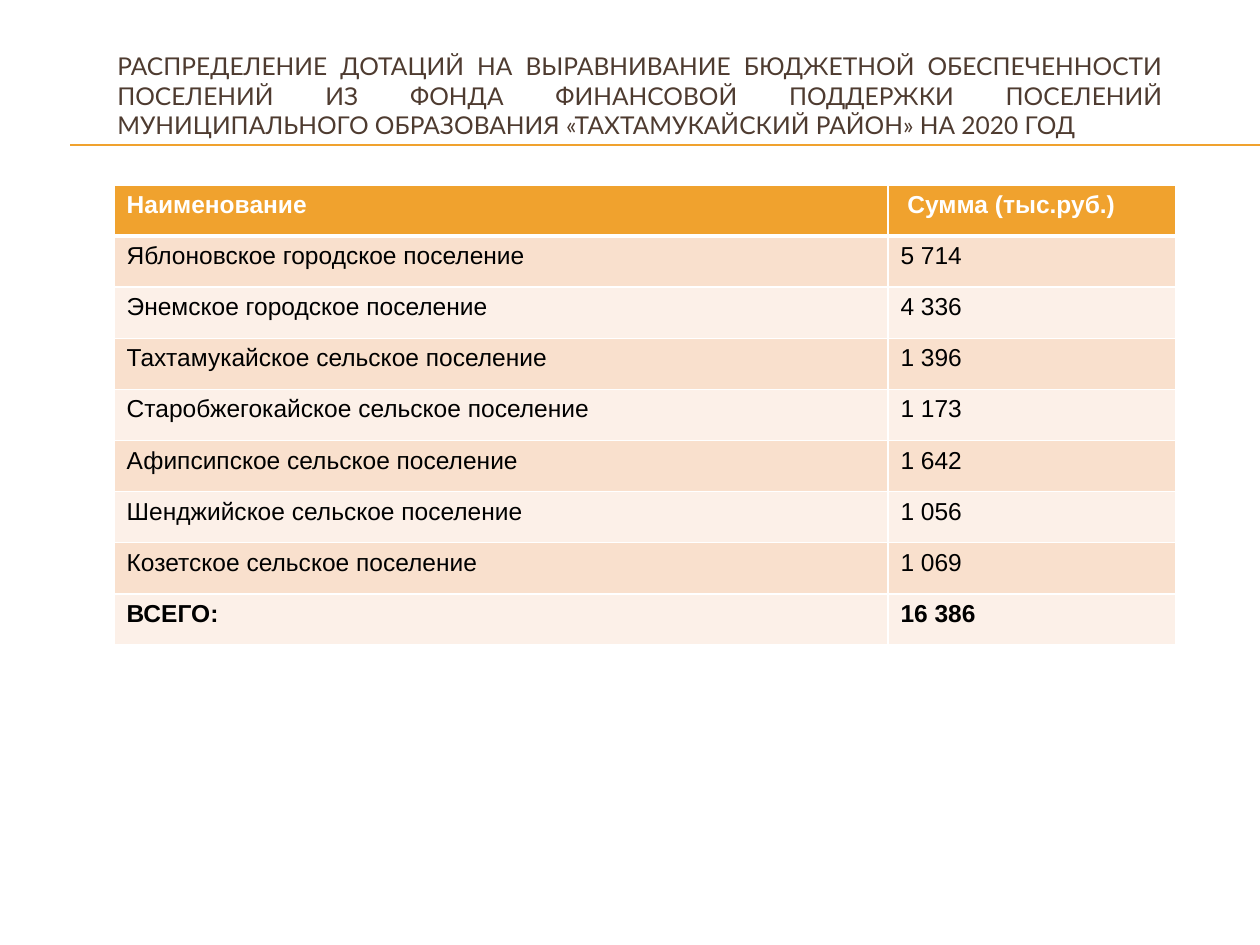
from lxml.etree import SubElement
from pptx import Presentation
from pptx.dml.color import RGBColor
from pptx.enum.shapes import MSO_CONNECTOR
from pptx.enum.text import MSO_ANCHOR, MSO_AUTO_SIZE, PP_ALIGN
from pptx.oxml.ns import qn
from pptx.util import Cm, Pt

COLORS = {
    "gold": "F0A22E",
    "brown": "4E3B30",
    "peach": "F9E0CD",
    "cream": "FCF0E8",
    "white": "FFFFFF",
    "black": "000000",
}
TITLE = (
    "РАСПРЕДЕЛЕНИЕ ДОТАЦИЙ НА ВЫРАВНИВАНИЕ БЮДЖЕТНОЙ ОБЕСПЕЧЕННОСТИ "
    "ПОСЕЛЕНИЙ ИЗ ФОНДА ФИНАНСОВОЙ ПОДДЕРЖКИ ПОСЕЛЕНИЙ "
    "МУНИЦИПАЛЬНОГО ОБРАЗОВАНИЯ «ТАХТАМУКАЙСКИЙ РАЙОН» НА 2020 ГОД"
)
GRANTS = [
    ("Наименование", " Сумма (тыс.руб.)"),
    ("Яблоновское городское поселение", "5 714"),
    ("Энемское городское поселение", "4 336"),
    ("Тахтамукайское сельское поселение", "1 396"),
    ("Старобжегокайское сельское поселение", "1 173"),
    ("Афипсипское сельское поселение", "1 642"),
    ("Шенджийское сельское поселение", "1 056"),
    ("Козетское сельское поселение", "1 069"),
    ("ВСЕГО:", "16 386"),
]


def color(name):
    return RGBColor.from_string(COLORS[name])


def style(par, face, tint, bold=False):
    for run in par.runs:
        run.font.name = face
        run.font.size = Pt(14)
        run.font.bold = bold
        run.font.color.rgb = color(tint)


def add_rules(slide, left, top, width):
    """Draw the close pair of lines under the title."""
    for y in (top, top + 0.02):
        rule = slide.shapes.add_connector(
            MSO_CONNECTOR.STRAIGHT, Cm(left), Cm(y), Cm(left + width), Cm(y))
        rule.line.color.rgb = color("gold")
        rule.line.width = Pt(0.75)
        SubElement(rule._element.spPr, qn("a:effectLst"))


def set_title(slide, left, top, width, height):
    title = slide.shapes.title
    title.left, title.top = Cm(left), Cm(top)
    title.width, title.height = Cm(width), Cm(height)
    frame = title.text_frame
    frame.text = TITLE
    frame.word_wrap = True
    frame.auto_size = MSO_AUTO_SIZE.NONE
    frame.vertical_anchor = MSO_ANCHOR.MIDDLE
    par = frame.paragraphs[0]
    par.alignment = PP_ALIGN.JUSTIFY
    style(par, "Lato", "brown")


def set_edges(cell, top, bottom):
    """Give the cell white borders; must come before its fill."""
    props = cell._tc.get_or_add_tcPr()
    for side, width in (("L", 1), ("R", 1), ("T", top), ("B", bottom)):
        edge = SubElement(props, qn(f"a:ln{side}"), w=str(Pt(width)))
        fill = SubElement(edge, qn("a:solidFill"))
        SubElement(fill, qn("a:srgbClr"), val=COLORS["white"])


def add_grants(slide, left, top, width, height):
    count = len(GRANTS)
    table = slide.shapes.add_table(
        count, 2, Cm(left), Cm(top), Cm(width), Cm(height)).table
    name_width = 15.6
    table.columns[0].width = Cm(name_width)
    table.columns[1].width = Cm(width - name_width)
    for i, texts in enumerate(GRANTS):
        head = i == 0
        shade = "gold" if head else ("cream", "peach")[i % 2]
        for j, text in enumerate(texts):
            cell = table.cell(i, j)
            set_edges(cell, 3 if i == 1 else 1, 3 if head else 1)
            cell.fill.solid()
            cell.fill.fore_color.rgb = color(shade)
            cell.text_frame.text = text
            style(cell.text_frame.paragraphs[0], "Arial",
                  "white" if head else "black", i in (0, count - 1))


def main():
    prs = Presentation()
    prs.slide_width, prs.slide_height = Cm(25.4), Cm(19.05)
    slide = prs.slides.add_slide(prs.slide_layouts[5])
    add_rules(slide, 1.42, 2.92, 23.98)
    set_title(slide, 2.11, 0.33, 21.59, 3.18)
    add_grants(slide, 2.3, 3.73, 21.4, 9.27)
    prs.save("out.pptx")


if __name__ == "__main__":
    main()
